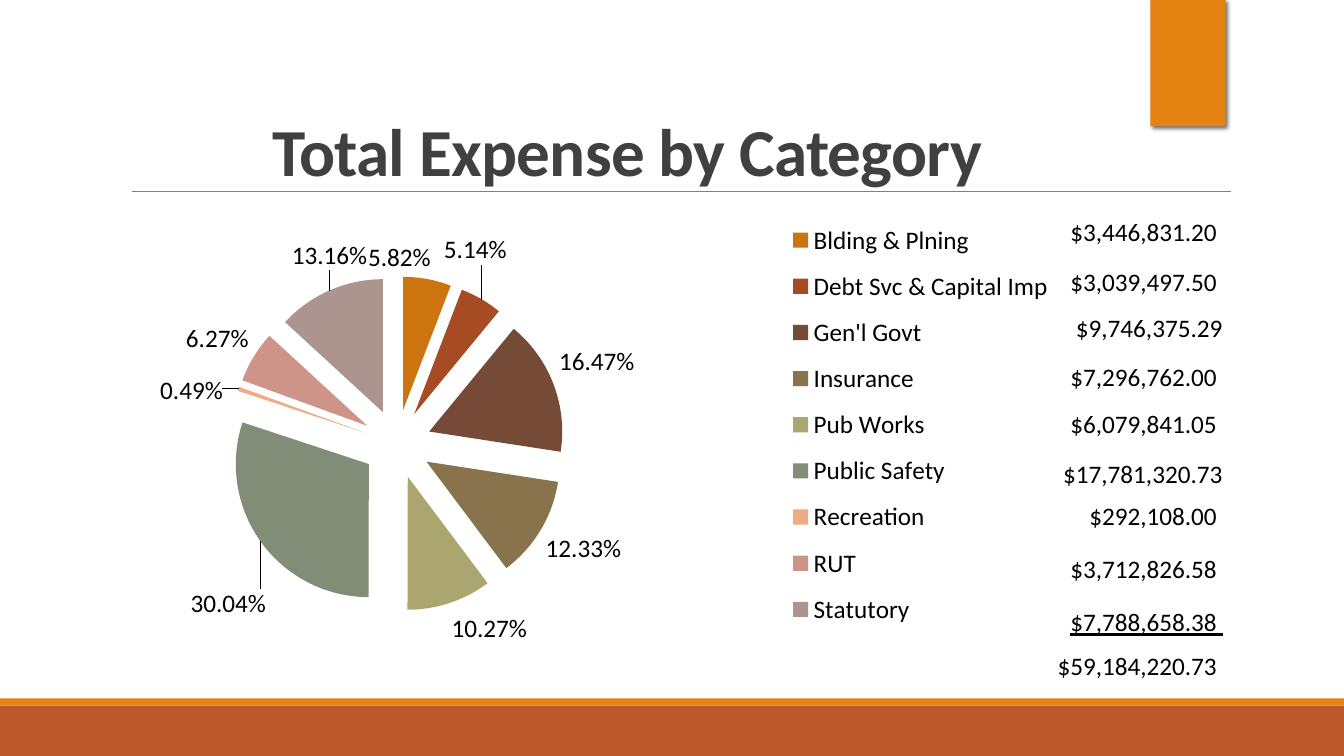
"""Build the slide with expenses by category as a pie chart and a column of amounts."""
from lxml import etree
from pptx import Presentation
from pptx import util as u
from pptx.chart.data import CategoryChartData
from pptx.dml.color import RGBColor
from pptx.enum import chart as charts, shapes, text
from pptx.oxml import parse_xml
from pptx.oxml.ns import nsdecls, qn

COLOURS = {
    "rust": "BD582C", "orange": "E48312", "rule": "808080",
    "title": "404040", "text": "000000",
}
CATEGORIES = [
    ("Blding & Plning", 0.0582, "CC7510"),
    ("Debt Svc & Capital Imp", 0.0514, "A64B24"),
    ("Gen'l Govt", 0.1647, "754B38"),
    ("Insurance", 0.1233, "88734C"),
    ("Pub Works", 0.1027, "ABA570"),
    ("Public Safety", 0.3004, "828D78"),
    ("Recreation", 0.0049, "EDAC84"),
    ("RUT", 0.0627, "CF9488"),
    ("Statutory", 0.1316, "AC958E"),
]
AMOUNTS = [
    ("$3,446,831.20 ", 1.35), ("$3,039,497.50 ", 1.27), ("$9,746,375.29", 1.16),
    ("$7,296,762.00 ", 1.22), ("$6,079,841.05 ", 1.19), ("$17,781,320.73", 1.26),
    ("$292,108.00 ", 1.07), ("$3,712,826.58 ", 1.32), ("$7,788,658.38 ", 1.35),
    ("$59,184,220.73 ", 1.09),
]
LABEL_SHIFTS = {
    0: (-0.06, 0), 1: (-0.04, -0.06), 2: (0, -0.01), 4: (0, 0.01),
    5: (0.01, 0.09), 6: (-0.01, 0.04), 8: (0.04, -0.03),
}


def set_format(target, colour, **values):
    for name, value in values.items():
        setattr(target, name, value)
    target.color.rgb = RGBColor.from_string(COLOURS[colour])


def manual_layout(**values):
    items = "".join(f'<c:{name} val="{value}"/>' for name, value in values.items())
    return parse_xml(f'<c:layout {nsdecls("c")}><c:manualLayout>{items}</c:manualLayout></c:layout>')


deck = Presentation()
deck.slide_width, deck.slide_height = u.Cm(33.87), u.Cm(19.05)
page = deck.slides.add_slide(deck.slide_layouts[5])

for colour, bounds in [
    ("rust", (0, 17.78, 33.87, 1.27)),
    ("orange", (0, 17.6, 33.87, 0.18)),
    ("orange", (28.99, 0, 1.9, 3.18)),
]:
    box = page.shapes.add_shape(shapes.MSO_SHAPE.RECTANGLE, *map(u.Cm, bounds))
    box.shadow.inherit = False
    box.fill.solid()
    box.fill.fore_color.rgb = RGBColor.from_string(COLOURS[colour])
    box.line.fill.background()
effects = box._element.spPr.find(qn("a:effectLst"))
effects.append(parse_xml(
    f'<a:outerShdw {nsdecls("a")} blurRad="38100" dist="25400" dir="2700000">'
    '<a:srgbClr val="000000"><a:alpha val="60000"/></a:srgbClr></a:outerShdw>'))

rule = page.shapes.add_connector(
    shapes.MSO_CONNECTOR.STRAIGHT, u.Cm(3.33), u.Cm(4.83), u.Cm(31.01), u.Cm(4.83))
set_format(rule.line, "rule", width=u.Pt(0.5))
etree.SubElement(rule._element.spPr, qn("a:effectLst"))

title = page.shapes.title
title.left, title.top, title.width, title.height = map(u.Cm, (3.05, 0.89, 27.94, 4.04))
title.text_frame.vertical_anchor = text.MSO_ANCHOR.BOTTOM
title.text_frame.margin_right = u.Cm(1.52)
para = title.text_frame.paragraphs[0]
para.alignment = text.PP_ALIGN.CENTER
para.line_spacing = 0.85
span = para.add_run()
span.text = "Total Expense by Category\t"
set_format(span.font, "title", name="Calibri", size=u.Pt(48), bold=True)
span.font._element.set("spc", "-50")

table = page.shapes.add_table(
    len(AMOUNTS), 1, u.Cm(25.02), u.Cm(4.9), u.Cm(5.82),
    u.Cm(sum(height for _, height in AMOUNTS))).table
table.first_row = table.horz_banding = False
for index, (amount, height) in enumerate(AMOUNTS):
    table.rows[index].height = u.Cm(height)
    cell = table.cell(index, 0)
    cell.fill.background()
    cell.vertical_anchor = text.MSO_ANCHOR.BOTTOM
    cell.margin_left = cell.margin_right = cell.margin_top = u.Cm(0.03)
    cell.margin_bottom = 0
    para = cell.text_frame.paragraphs[0]
    para.alignment = text.PP_ALIGN.RIGHT
    span = para.add_run()
    span.text = amount
    set_format(span.font, "text", name="Calibri", size=u.Pt(18),
               underline=index == len(AMOUNTS) - 2)

data = CategoryChartData(number_format="0.00%")
data.categories = [name for name, _, _ in CATEGORIES]
data.add_series("Series 1", [share for _, share, _ in CATEGORIES])
chart = page.shapes.add_chart(
    charts.XL_CHART_TYPE.PIE, *map(u.Cm, (1.63, 4.67, 25.37, 12.07)), data).chart
chart.has_title = False
set_format(chart.font, "text", name="Calibri", size=u.Pt(18))
chart._chartSpace.find(qn("c:txPr")).addprevious(parse_xml(
    f'<c:spPr {nsdecls("c", "a")}><a:noFill/><a:ln><a:noFill/></a:ln></c:spPr>'))

chart.has_legend = True
chart.legend.position = charts.XL_LEGEND_POSITION.RIGHT
chart.legend.include_in_layout = False
legend = chart.legend._element
for old in legend.findall(qn("c:layout")):
    legend.remove(old)
legend.find(qn("c:legendPos")).addnext(
    manual_layout(xMode="edge", yMode="edge", x=0.72, y=0.05, w=0.26, h=0.9))

area = chart._chartSpace.chart.plotArea
for old in area.findall(qn("c:layout")):
    area.remove(old)
area.insert(0, manual_layout(
    layoutTarget="inner", xMode="edge", yMode="edge", x=0, y=0.19, w=0.66, h=0.7))

chart.plots[0].vary_by_categories = True
series = chart.plots[0].series[0]
labels = series.data_labels
labels.show_value = True
labels.number_format = "0.00%"
labels.number_format_is_linked = False
labels.position = charts.XL_LABEL_POSITION.OUTSIDE_END
for index, (_, _, colour) in enumerate(CATEGORIES):
    fill = series.points[index].format.fill
    fill.solid()
    fill.fore_color.rgb = RGBColor.from_string(colour)
series._element.find(qn("c:dPt")).addprevious(
    parse_xml(f'<c:explosion {nsdecls("c")} val="26"/>'))
for index, (across, down) in LABEL_SHIFTS.items():
    label = series.points[index].data_label
    label.position = charts.XL_LABEL_POSITION.OUTSIDE_END
    marker = label._get_or_add_dLbl().find(qn("c:idx"))
    marker.addnext(parse_xml(
        f'<c:numFmt {nsdecls("c")} formatCode="0.00%" sourceLinked="0"/>'))
    marker.addnext(manual_layout(x=across, y=down))

deck.save("out.pptx")
